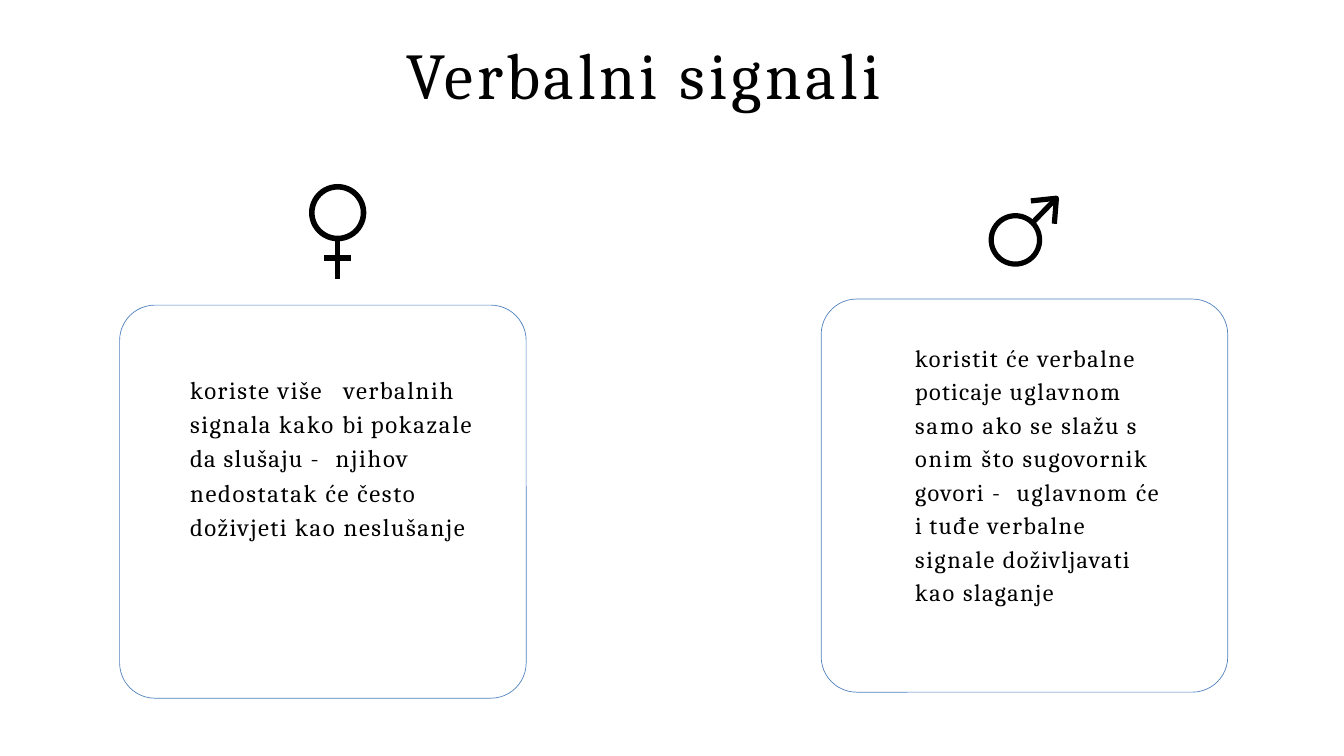
"""Build the slide comparing the verbal signals of women and men."""
from dataclasses import dataclass

from lxml.etree import SubElement
from pptx import Presentation
from pptx.dml.color import RGBColor
from pptx.enum.shapes import MSO_CONNECTOR as Connector, MSO_SHAPE as Preset
from pptx.oxml.ns import qn
from pptx.util import Inches, Pt

COLORS = {"paper": "FFFFFF", "ink": "000000", "frame": "4F81BD"}
FONT = "Cambria"
COLUMNS, ROWS = 20, 11.25
WIDTH, HEIGHT = Inches(20), Inches(11.25)
CARD_WIDTH, CARD_HEIGHT = 6.05, 5.85

Point = tuple[float, float]
Line = list[tuple[str, float]]


@dataclass
class TextBlock:
    left: float
    top: float
    width: float
    height: float
    size: float
    lines: list[Line]
    line_spacing: float = 1.0
    tab: float = 0


@dataclass
class Symbol:
    left: float
    top: float
    diameter: float
    weight: float
    strokes: list[tuple[Point, Point]]
    arrowhead: tuple[Point, ...] = ()


@dataclass
class Panel:
    left: float
    top: float
    symbol: Symbol
    text: TextBlock


TITLE = TextBlock(6.04, 0.5, 7.64, 1.19, 70, [[("Verbalni ", 3.9), ("signali", 4.4)]])

PANELS = [
    Panel(
        1.78, 4.54,
        Symbol(4.64, 2.78, 0.77, 5.97,
               [((5.02, 3.55), (5.02, 4.15)), ((4.82, 3.84), (5.23, 3.84))]),
        TextBlock(2.82, 5.49, 4.46, 2.58, 26.5, [
            [("koriste više\tverbalnih", 1.7)],
            [("signala ", 1.6), ("kako ", 1.9), ("bi ", 1.2), ("pokazale", 1.8)],
            [("da ", 1.3), ("slušaju ", 1.4), ("- ", 6.1), ("njihov", 1.8)],
            [("nedostatak ", 1.8), ("će ", 1.7), ("često", 1.8)],
            [("doživjeti ", 1.5), ("kao ", 1.8), ("neslušanje", 1.7)],
        ], 1.16, 2.28),
    ),
    Panel(
        12.22, 4.45,
        Symbol(14.75, 3.21, 0.72, 5.58, [((15.36, 3.32), (15.7, 2.97))],
               ((15.69, 3.33), (15.72, 2.95), (15.34, 2.99))),
        TextBlock(13.61, 5.03, 3.83, 4.03, 26, [
            [("koristit ", 1.6), ("će verbalne", 1.7)],
            [("poticaje ", 1.4), ("uglavnom", 1.9)],
            [("samo ", 2.1), ("ako ", 1.8), ("se ", 2), ("slažu ", 1.6), ("s", 2)],
            [("onim ", 2), ("što ", 1.8), ("sugovornik", 1.7)],
            [("govori ", 1.6), ("- ", 6), ("uglavnom ", 1.9), ("će", 1.7)],
            [("i ", 1.1), ("tuđe ", 1.6), ("verbalne", 1.7)],
            [("signale ", 1.7), ("doživljavati", 1.4)],
            [("kao ", 1.8), ("slaganje", 1.6)],
        ], 1.15),
    ),
]


def across(columns: float) -> int:
    return round(WIDTH * columns / COLUMNS)


def down(rows: float) -> int:
    return round(HEIGHT * rows / ROWS)


def place(left: float, top: float, width: float, height: float) -> tuple[int, ...]:
    return across(left), down(top), across(width), down(height)


def set_line(shape, color: str, weight: float) -> None:
    shape.line.color.rgb = RGBColor.from_string(COLORS[color])
    shape.line.width = Pt(weight)


def draw_card(page, panel: Panel) -> None:
    card = page.shapes.add_shape(
        Preset.ROUNDED_RECTANGLE,
        *place(panel.left, panel.top, CARD_WIDTH, CARD_HEIGHT))
    card.adjustments[0] = 0.09
    card.shadow.inherit = False
    card.fill.solid()
    card.fill.fore_color.rgb = RGBColor.from_string(COLORS["paper"])
    set_line(card, "frame", 0.75)


def draw_symbol(page, symbol: Symbol) -> None:
    for start, end in symbol.strokes:
        stroke = page.shapes.add_connector(
            Connector.STRAIGHT, across(start[0]), down(start[1]),
            across(end[0]), down(end[1]))
        set_line(stroke, "ink", symbol.weight)
        SubElement(stroke._element.spPr, qn("a:effectLst"))
    outlines = [page.shapes.add_shape(
        Preset.OVAL,
        *place(symbol.left, symbol.top, symbol.diameter, symbol.diameter))]
    if symbol.arrowhead:
        first, *others = [(across(x), down(y)) for x, y in symbol.arrowhead]
        builder = page.shapes.build_freeform(*first)
        builder.add_line_segments(others, close=False)
        outlines.append(builder.convert_to_shape())
    for outline in outlines:
        outline.shadow.inherit = False
        outline.fill.background()
        set_line(outline, "ink", symbol.weight)


def write_text(page, block: TextBlock) -> None:
    box = page.shapes.add_textbox(
        *place(block.left, block.top, block.width, block.height))
    frame = box.text_frame
    frame.word_wrap = True
    frame.margin_left = frame.margin_top = Inches(0.01)
    frame.margin_right = frame.margin_bottom = 0
    para = frame.paragraphs[0]
    para.line_spacing = block.line_spacing
    para.space_before = Pt(1)
    if block.tab:
        tabs = SubElement(para._p.get_or_add_pPr(), qn("a:tabLst"))
        SubElement(tabs, qn("a:tab"), pos=str(across(block.tab)), algn="l")
    for number, line in enumerate(block.lines):
        if number:
            para.add_line_break()
        for text, spacing in line:
            span = para.add_run()
            span.text = text
            span.font.name = FONT
            span.font.size = Pt(block.size)
            span.font.color.rgb = RGBColor.from_string(COLORS["ink"])
            span._r.get_or_add_rPr().set("spc", str(round(spacing * 100)))


def main() -> None:
    deck = Presentation()
    deck.slide_width, deck.slide_height = WIDTH, HEIGHT
    page = deck.slides.add_slide(deck.slide_layouts[6])
    for panel in PANELS:
        draw_card(page, panel)
        draw_symbol(page, panel.symbol)
    for block in [TITLE, *(panel.text for panel in PANELS)]:
        write_text(page, block)
    deck.save("out.pptx")


if __name__ == "__main__":
    main()
